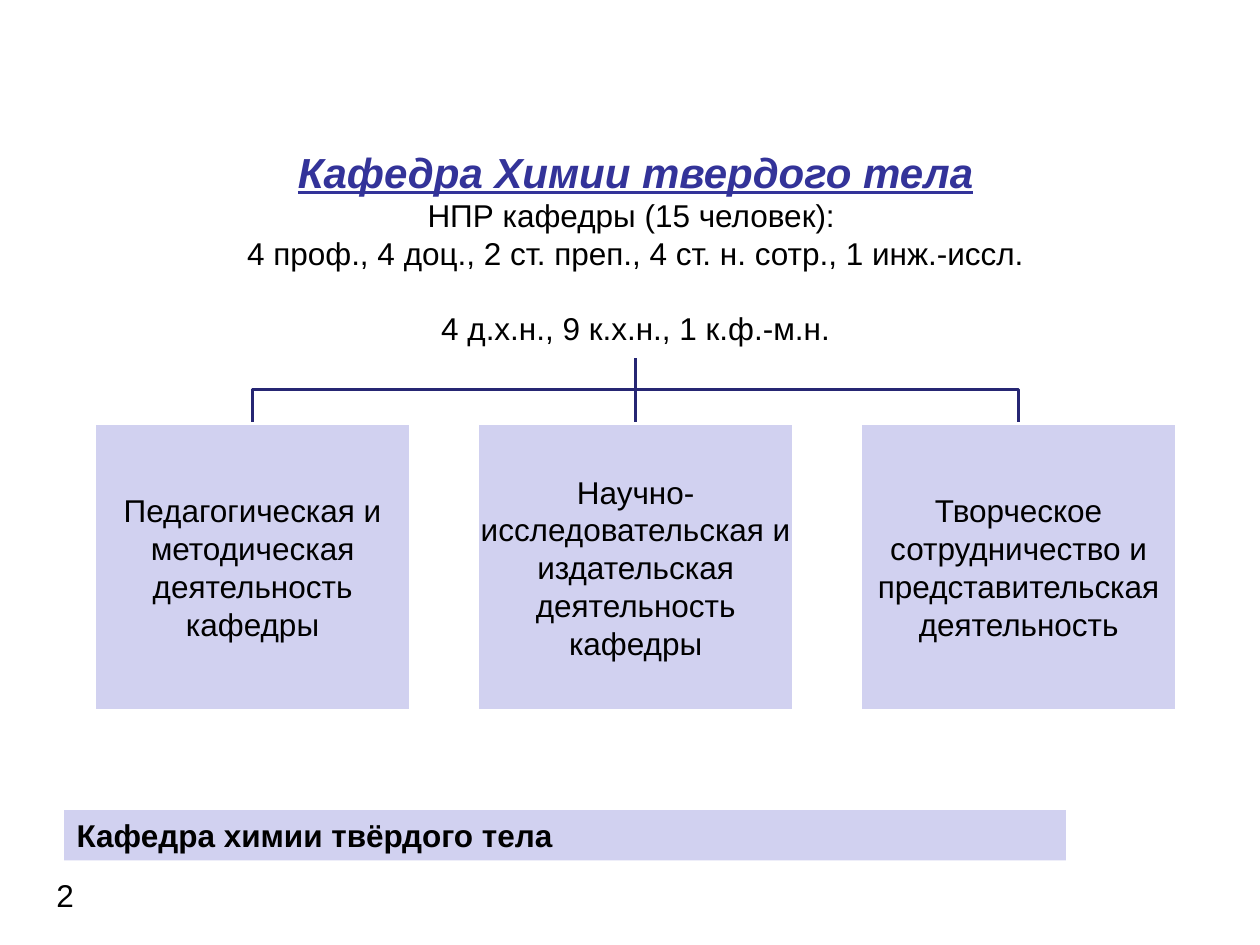
from lxml import etree
from pptx import Presentation
from pptx.dml.color import RGBColor
from pptx.enum.shapes import MSO_CONNECTOR, MSO_SHAPE
from pptx.enum.text import MSO_ANCHOR, MSO_AUTO_SIZE, PP_ALIGN
from pptx.oxml.ns import qn
from pptx.util import Inches, Pt

RECTANGLE = MSO_SHAPE.RECTANGLE
STRAIGHT = MSO_CONNECTOR.STRAIGHT
MIDDLE = MSO_ANCHOR.MIDDLE
NO_AUTOFIT = MSO_AUTO_SIZE.NONE
LEFT, CENTER = PP_ALIGN.LEFT, PP_ALIGN.CENTER
BOTTOM_SIDE, TOP_SIDE = 2, 0

COLORS = {
    "white": "FFFFFF",
    "lavender": "D1D1F0",
    "branch": "262673",
    "heading": "333399",
    "text": "000000",
}

HEADING = "Кафедра Химии твердого тела"
STAFF = [
    ("НПР кафедры (15 человек): ", 0),
    ("4 проф., 4 доц., 2 ст. преп., 4 ст. н. сотр., 1 инж.-иссл.", 0),
    ("4 д.х.н., 9 к.х.н., 1 к.ф.-м.н.", 21),
]
ACTIVITIES = [
    "Педагогическая и методическая деятельность кафедры",
    "Научно-исследовательская и издательская деятельность кафедры",
    "Творческое сотрудничество и представительская деятельность",
]
FOOTER = "Кафедра химии твёрдого тела"
PAGE_NUMBER = "2"

HEAD_LEFT, HEAD_TOP, HEAD_WIDTH, HEAD_HEIGHT = 1.51, 0.68, 7.07, 2.15
BOX_LEFT, BOX_TOP, BOX_WIDTH, BOX_HEIGHT = 0.75, 3.36, 2.51, 2.28
BOX_PITCH = 3.04
BRANCH_TOP = 3.09


def color(name):
    return RGBColor.from_string(COLORS[name])


def write(paragraph, text, size=18, color_name="text", align=CENTER,
          bold=False, italic=False, underline=False, spacing=1, before=0):
    paragraph.alignment = align
    paragraph.line_spacing = spacing
    paragraph.space_before = Pt(before)
    run = paragraph.add_run()
    run.text = text
    font = run.font
    font.name, font.size = "Arial", Pt(size)
    font.bold, font.italic, font.underline = bold, italic, underline
    font.color.rgb = color(color_name)


def set_frame(shape, inset):
    frame = shape.text_frame
    frame.word_wrap = True
    frame.auto_size = NO_AUTOFIT
    frame.vertical_anchor = MIDDLE
    frame.margin_left = frame.margin_right = Inches(inset)
    frame.margin_top = frame.margin_bottom = Inches(inset)
    return frame


def style_line(line):
    line.color.rgb = color("branch")
    line.width = Pt(2)


def add_box(slide, left, top, width, height):
    shape = slide.shapes.add_shape(
        RECTANGLE, Inches(left), Inches(top), Inches(width), Inches(height))
    shape.shadow.inherit = False
    shape.fill.solid()
    shape.fill.fore_color.rgb = color("lavender")
    return shape


def outline_white(shape):
    shape.line.color.rgb = color("white")
    shape.line.width = Pt(2)


def add_head(slide):
    head = slide.shapes.title
    head.left, head.top = Inches(HEAD_LEFT), Inches(HEAD_TOP)
    head.width, head.height = Inches(HEAD_WIDTH), Inches(HEAD_HEIGHT)
    head.fill.solid()
    head.fill.fore_color.rgb = color("white")
    outline_white(head)
    frame = set_frame(head, 0.02)
    write(frame.paragraphs[0], HEADING, size=24, color_name="heading",
          bold=True, italic=True, underline=True, spacing=2.0)
    for text, before in STAFF:
        write(frame.add_paragraph(), text, before=before)
    return head


def add_activities(slide):
    boxes = []
    for index, text in enumerate(ACTIVITIES):
        box = add_box(slide, BOX_LEFT + index * BOX_PITCH, BOX_TOP,
                      BOX_WIDTH, BOX_HEIGHT)
        outline_white(box)
        write(set_frame(box, 0.01).paragraphs[0], text)
        boxes.append(box)
    return boxes


def add_branches(slide, head, boxes):
    first, middle, last = [box.left + box.width // 2 for box in boxes]
    box_top, branch_top = Inches(BOX_TOP), Inches(BRANCH_TOP)
    builder = slide.shapes.build_freeform(first, box_top)
    builder.add_line_segments(
        [(first, branch_top), (last, branch_top), (last, box_top)], close=False)
    bracket = builder.convert_to_shape()
    bracket.shadow.inherit = False
    bracket.fill.background()
    style_line(bracket.line)

    trunk = slide.shapes.add_connector(
        STRAIGHT, middle, head.top + head.height, middle, box_top)
    trunk.begin_connect(head, BOTTOM_SIDE)
    trunk.end_connect(boxes[1], TOP_SIDE)
    style_line(trunk.line)
    etree.SubElement(trunk._element.spPr, qn("a:effectLst"))

    for branch in (bracket, trunk):
        head._element.addprevious(branch._element)


def main():
    presentation = Presentation()
    presentation.slide_width, presentation.slide_height = Inches(10), Inches(7.5)
    slide = presentation.slides.add_slide(presentation.slide_layouts[5])

    head = add_head(slide)
    boxes = add_activities(slide)
    add_branches(slide, head, boxes)

    footer = add_box(slide, 0.51, 6.43, 7.95, 0.4)
    footer.line.fill.background()
    footer.text_frame.vertical_anchor = MIDDLE
    write(footer.text_frame.paragraphs[0], FOOTER, align=LEFT, bold=True)

    number = slide.shapes.add_textbox(
        Inches(0.35), Inches(6.9), Inches(0.34), Inches(0.4))
    write(number.text_frame.paragraphs[0], PAGE_NUMBER, align=LEFT)

    presentation.save("out.pptx")


if __name__ == "__main__":
    main()
